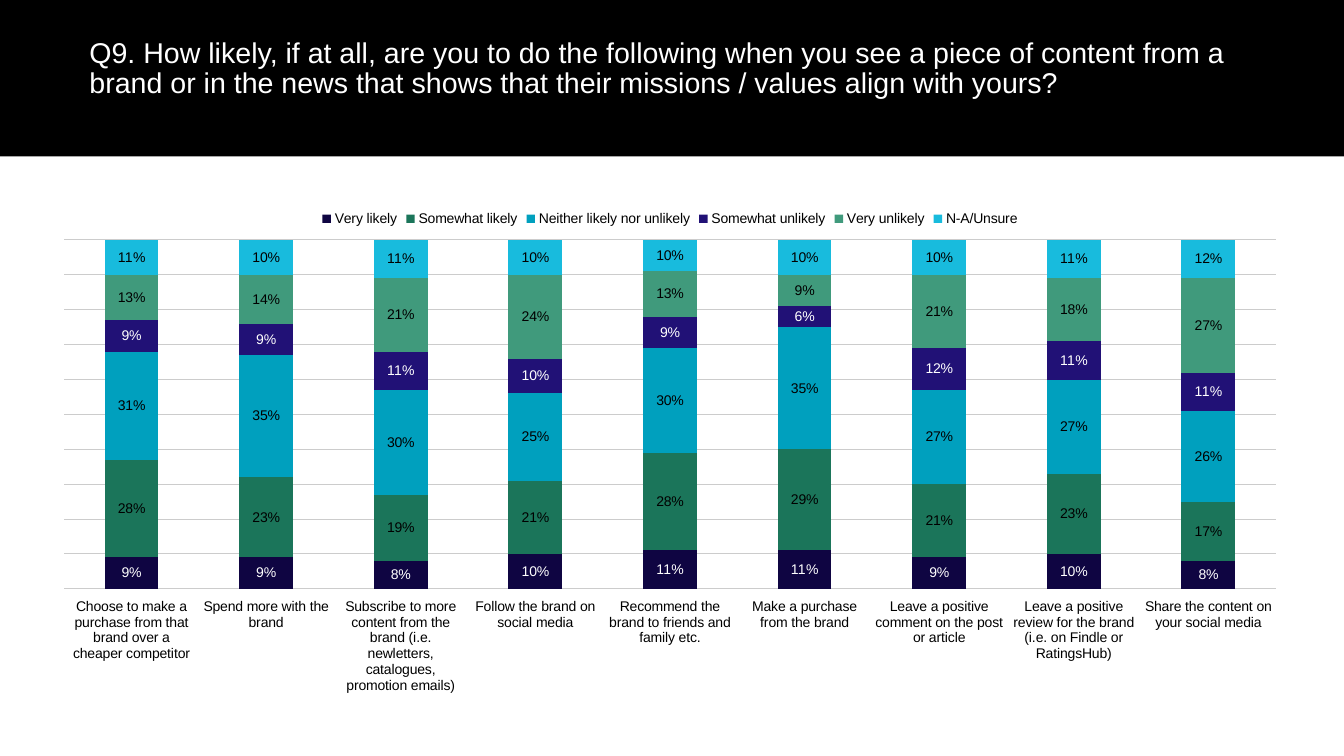
from dataclasses import dataclass

from lxml.etree import SubElement
from pptx import Presentation
from pptx.chart.data import CategoryChartData as ChartData
from pptx.dml.color import RGBColor as Color
from pptx.enum.chart import XL_CHART_TYPE as ChartType
from pptx.enum.chart import XL_LEGEND_POSITION as LegendPlace
from pptx.enum.chart import XL_TICK_LABEL_POSITION as LabelPlace
from pptx.enum.chart import XL_TICK_MARK as TickMark
from pptx.enum.shapes import MSO_SHAPE as Preset
from pptx.enum.text import MSO_ANCHOR as Anchor
from pptx.enum.text import MSO_AUTO_SIZE as AutoSize
from pptx.enum.text import PP_ALIGN as Align
from pptx.oxml.ns import qn
from pptx.util import Inches, Pt


@dataclass(frozen=True)
class Theme:
    """Colours, font and type sizes of the slide."""
    black: str = "000000"
    white: str = "FFFFFF"
    grid: str = "CCCCCC"
    font: str = "Arial"
    heading: float = 20.4
    small: float = 10


THEME = Theme()
WIDTH, HEIGHT = 13.33, 7.5
QUESTION = (
    "Q9. How likely, if at all, are you to do the following when you see a piece of content "
    "from a brand or in the news that shows that their missions / values align with yours?"
)
ACTIONS = [
    "Share the content on your social media",
    "Leave a positive review for the brand (i.e. on Findle or RatingsHub)",
    "Leave a positive comment on the post or article",
    "Make a purchase from the brand",
    "Recommend the brand to friends and family etc.",
    "Follow the brand on social media",
    "Subscribe to more content from the brand (i.e. newletters, catalogues, promotion emails)",
    "Spend more with the brand",
    "Choose to make a purchase from that brand over a cheaper competitor",
]
ANSWERS = [
    ("Very likely", "0F0542", THEME.white, [8, 10, 9, 11, 11, 10, 8, 9, 9]),
    ("Somewhat likely", "1B755A", THEME.black, [17, 23, 21, 29, 28, 21, 19, 23, 28]),
    ("Neither likely nor unlikely", "00A0BE", THEME.black, [26, 27, 27, 35, 30, 25, 30, 35, 31]),
    ("Somewhat unlikely", "211176", THEME.white, [11, 11, 12, 6, 9, 10, 11, 9, 9]),
    ("Very unlikely", "409A7C", THEME.black, [27, 18, 21, 9, 13, 24, 21, 14, 13]),
    ("N-A/Unsure", "18BBDD", THEME.black, [12, 11, 10, 10, 10, 10, 11, 10, 11]),
]


def apply_format(target, values):
    """Set each named attribute of the target."""
    for name, value in values.items():
        setattr(target, name, value)


def style_font(font, size, color):
    """Give a font the theme's typeface, a size and a colour."""
    apply_format(font, {"name": THEME.font, "size": Pt(size), "bold": False})
    font.color.rgb = Color.from_string(color)


def place(left, top, width, height):
    """Turn shares of the slide into a position and size."""
    return (Inches(WIDTH * left), Inches(HEIGHT * top),
            Inches(WIDTH * width), Inches(HEIGHT * height))


def add_heading(slide, text):
    """Set the question in the title placeholder over a black band."""
    title = slide.shapes.title
    band = slide.shapes.add_shape(Preset.RECTANGLE, *place(0, 0, 1, 0.207))
    band.shadow.inherit = False
    band.fill.solid()
    band.fill.fore_color.rgb = Color.from_string(THEME.black)
    band.line.fill.background()
    title.element.addprevious(band.element)
    box = dict(zip(("left", "top", "width", "height"), place(0.059, 0.047, 0.861, 0.107)))
    apply_format(title, box)
    frame = title.text_frame
    apply_format(frame, {"word_wrap": True, "auto_size": AutoSize.NONE,
                         "vertical_anchor": Anchor.TOP})
    para = frame.paragraphs[0]
    apply_format(para, {"alignment": Align.LEFT, "line_spacing": 0.85, "space_before": Pt(0)})
    span = para.add_run()
    span.text = text
    style_font(span.font, THEME.heading, THEME.white)


def set_plot_area(chart, **shares):
    """Fix the inner plot area as shares of the chart."""
    area = chart.plots[0]._element.getparent()
    layout = area.find(qn("c:layout"))
    if layout is None:
        layout = SubElement(area, qn("c:layout"))
        area.insert(0, layout)
    manual = SubElement(layout, qn("c:manualLayout"))
    settings = {"layoutTarget": "inner", "xMode": "edge", "yMode": "edge", **shares}
    for name, value in settings.items():
        SubElement(manual, qn(f"c:{name}")).set("val", str(value))


def style_axes(chart):
    """Reverse the categories and keep only the grid of the value axis."""
    actions, shares = chart.category_axis, chart.value_axis
    apply_format(actions, {"reverse_order": True, "major_tick_mark": TickMark.NONE,
                           "tick_label_position": LabelPlace.LOW})
    actions.format.line.fill.background()
    style_font(actions.tick_labels.font, THEME.small, THEME.black)
    apply_format(shares, {"minimum_scale": 0, "maximum_scale": 1, "major_unit": 0.1,
                          "has_major_gridlines": True, "visible": False})
    line = shares.major_gridlines.format.line
    line.width = Pt(0.75)
    line.color.rgb = Color.from_string(THEME.grid)


def style_series(series, fill, label_color):
    """Colour a series and label its values as percentages."""
    series.format.fill.solid()
    series.format.fill.fore_color.rgb = Color.from_string(fill)
    labels = series.data_labels
    apply_format(labels, {"show_value": True, "number_format": "0%",
                          "number_format_is_linked": False})
    style_font(labels.font, THEME.small, label_color)


def add_answer_chart(slide):
    """Add the stacked columns of answers for each action."""
    data = ChartData(number_format="0%")
    data.categories = ACTIONS
    for name, _, _, percents in ANSWERS:
        data.add_series(name, [percent / 100 for percent in percents])
    chart = slide.shapes.add_chart(
        ChartType.COLUMN_STACKED, *place(0.029, 0.264, 0.939, 0.669), data).chart
    apply_format(chart, {"has_title": False, "has_legend": True})
    style_font(chart.font, THEME.small, THEME.black)
    apply_format(chart.legend, {"position": LegendPlace.TOP, "include_in_layout": False})
    style_font(chart.legend.font, THEME.small, THEME.black)
    plot = chart.plots[0]
    apply_format(plot, {"gap_width": 150, "overlap": 100, "vary_by_categories": False})
    for series, (_, fill, label_color, _) in zip(plot.series, ANSWERS):
        style_series(series, fill, label_color)
    style_axes(chart)
    set_plot_area(chart, x=0.02, y=0.08, w=0.96, h=0.69)


def main():
    """Build and save the survey slide."""
    deck = Presentation()
    apply_format(deck, {"slide_width": Inches(WIDTH), "slide_height": Inches(HEIGHT)})
    page = deck.slides.add_slide(deck.slide_layouts[5])
    add_heading(page, QUESTION)
    add_answer_chart(page)
    deck.save("out.pptx")


if __name__ == "__main__":
    main()
